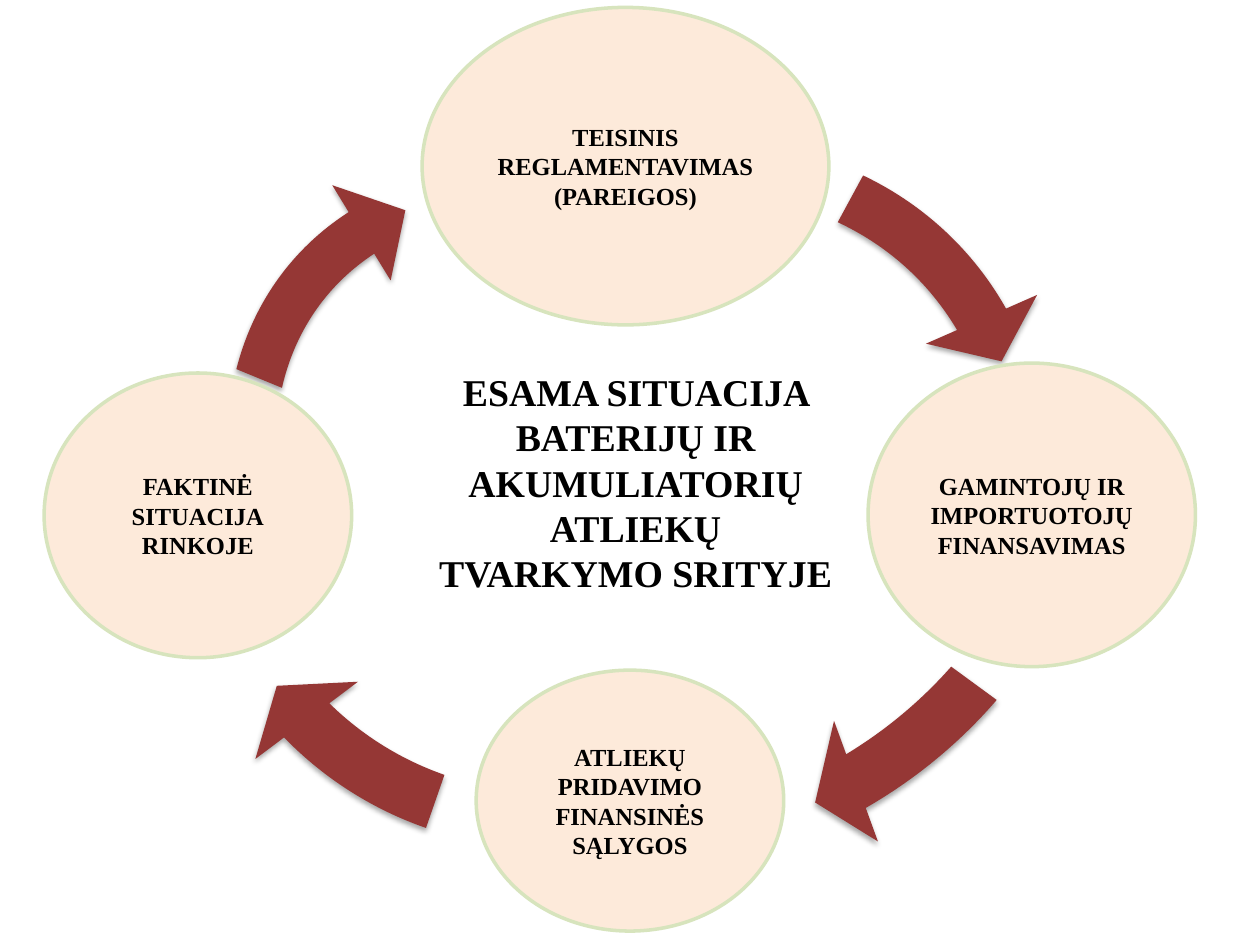
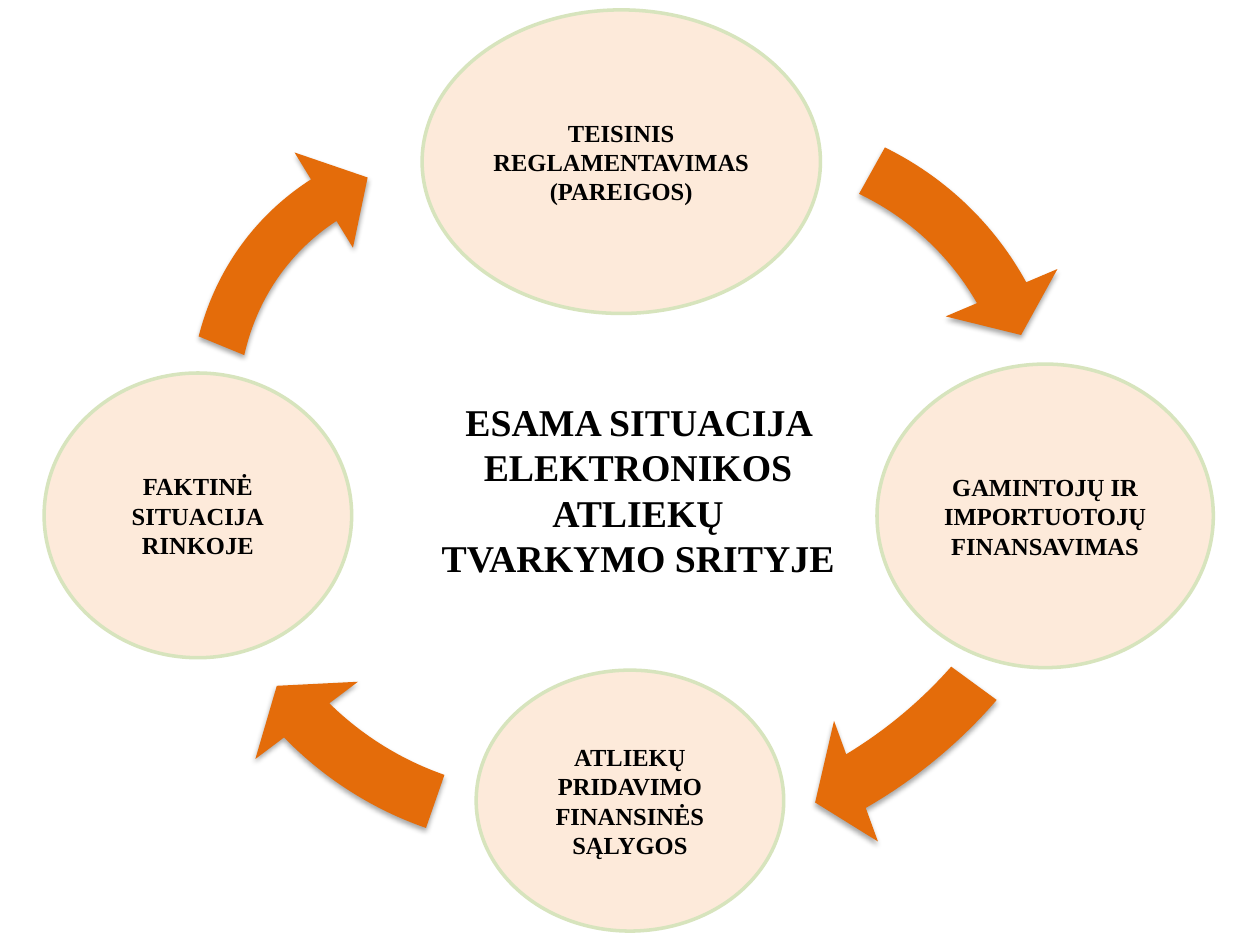
from lxml import etree
from pptx import Presentation
from pptx import util as u
from pptx.dml import color
from pptx.enum import shapes, text
from pptx.oxml import ns

FONT = "Times New Roman"
INK, OVAL_FILL, OVAL_LINE = "000000", "FDEADA", "D7E4BD"
SLIDE_BOX = (0, 0, 25.4, 19.05)

LABELS = {
    "top": "TEISINIS\nREGLAMENTAVIMAS\n(PAREIGOS)",
    "bottom": "ATLIEKŲ PRIDAVIMO FINANSINĖS SĄLYGOS",
    "left": "FAKTINĖ SITUACIJA\nRINKOJE",
    "right": "GAMINTOJŲ IR IMPORTUOTOJŲ FINANSAVIMAS",
}
# Left, top, width, height in cm
SHARED_OVALS = {"bottom": (9.6, 13.51, 6.2, 5.26), "left": (0.89, 7.52, 6.2, 5.74)}

# Width, height, rotation, head angle and tail angle of each arrow
ARROWS = {
    "right to bottom": (16.18, 18.82, 53.1, 5.49, 205.86),
    "bottom to left": (16.18, 16.18, 36.1, 59.49, 43.86),
    "left to top": (17.12, 14.07, 39.2, 114.91, 97.86),
    "top to right": (15.29, 16.36, 49.4, 167.49, 149.43),
}
SHARED_ARROW_CORNERS = {"right to bottom": (5.99, 0.3), "bottom to left": (2.92, 1.65)}
BAND_WIDTH, HEAD_SPREAD, HEAD_WIDTH = 0.07, 4.66, 0.08

CYCLES = [
    {
        "title": "ESAMA SITUACIJA BATERIJŲ IR AKUMULIATORIŲ ATLIEKŲ TVARKYMO SRITYJE",
        "title_box": (8.51, 7.52, 8.61, 4.39),
        "arrow_fill": "953735",
        "ovals": {"top": (8.51, 0.15, 8.2, 6.4), "right": (17.5, 7.32, 6.6, 6.12)},
        "corners": {"left to top": (3.38, 3.35), "top to right": (6.22, 1.88)},
        "turns": {},
    },
    {
        "title": "ESAMA SITUACIJA ELEKTRONIKOS ATLIEKŲ TVARKYMO SRITYJE",
        "title_box": (8.56, 7.26, 8.61, 5.21),
        "arrow_fill": "E46C0A",
        "ovals": {"top": (8.51, 0.2, 8.03, 6.12), "right": (17.68, 7.34, 6.78, 6.12)},
        "corners": {"left to top": (2.62, 2.69), "top to right": (6.58, 1.27)},
        "turns": {"top to right": 50.1},
    },
]


def rgb(hex_string):
    return color.RGBColor.from_string(hex_string)


def place(box, part):
    """Turn a part's place within a box into slide lengths."""
    left, top, width, height = part
    return [u.Cm(value) for value in (box[0] + left, box[1] + top, width, height)]


def write_text(shape, words, size, side_margin):
    frame = shape.text_frame
    frame.text = words
    frame.word_wrap = True
    frame.vertical_anchor = text.MSO_ANCHOR.MIDDLE
    frame.margin_left = frame.margin_right = u.Cm(side_margin)
    for paragraph in frame.paragraphs:
        paragraph.alignment = text.PP_ALIGN.CENTER
        for run in paragraph.runs:
            run.font.name = FONT
            run.font.size = u.Pt(size)
            run.font.bold = True
            run.font.color.rgb = rgb(INK)


def add_soft_shadow(shape):
    shape.shadow.inherit = False
    effects = shape._element.spPr.find(ns.qn("a:effectLst"))
    shadow = etree.SubElement(
        effects, ns.qn("a:outerShdw"), blurRad=str(u.Pt(3.1)), dist=str(u.Pt(1.8)),
        dir="5400000", rotWithShape="0")
    black = etree.SubElement(shadow, ns.qn("a:srgbClr"), val=INK)
    etree.SubElement(black, ns.qn("a:alpha"), val="35000")


def add_arrow(slide, box, part, rotation, angles, fill):
    arrow = slide.shapes.add_shape(shapes.MSO_SHAPE.CIRCULAR_ARROW, *place(box, part))
    arrow.rotation = rotation
    for index, value in enumerate((BAND_WIDTH, HEAD_SPREAD, *angles, HEAD_WIDTH)):
        arrow.adjustments[index] = value
    arrow.fill.solid()
    arrow.fill.fore_color.rgb = rgb(fill)
    arrow.line.fill.background()
    add_soft_shadow(arrow)


def add_oval(slide, box, part, label):
    oval = slide.shapes.add_shape(shapes.MSO_SHAPE.OVAL, *place(box, part))
    oval.shadow.inherit = False
    oval.fill.solid()
    oval.fill.fore_color.rgb = rgb(OVAL_FILL)
    oval.line.color.rgb = rgb(OVAL_LINE)
    oval.line.width = u.Pt(2)
    write_text(oval, label, 14, 0.2)


def add_cycle(slide, box, cycle):
    """Draw four arrows, four labelled ovals and the title in their middle."""
    corners = SHARED_ARROW_CORNERS | cycle["corners"]
    for name, (width, height, rotation, *angles) in ARROWS.items():
        add_arrow(slide, box, (*corners[name], width, height),
                  cycle["turns"].get(name, rotation), angles, cycle["arrow_fill"])
    ovals = SHARED_OVALS | cycle["ovals"]
    for side, label in LABELS.items():
        add_oval(slide, box, ovals[side], label)
    title = slide.shapes.add_textbox(*place(box, cycle["title_box"]))
    write_text(title, cycle["title"], 21.6, 0.25)


def main():
    presentation = Presentation()
    presentation.slide_width, presentation.slide_height = map(u.Cm, SLIDE_BOX[2:])
    for cycle in CYCLES:
        slide = presentation.slides.add_slide(presentation.slide_layouts[6])
        add_cycle(slide, SLIDE_BOX, cycle)
    presentation.save("out.pptx")


if __name__ == "__main__":
    main()
